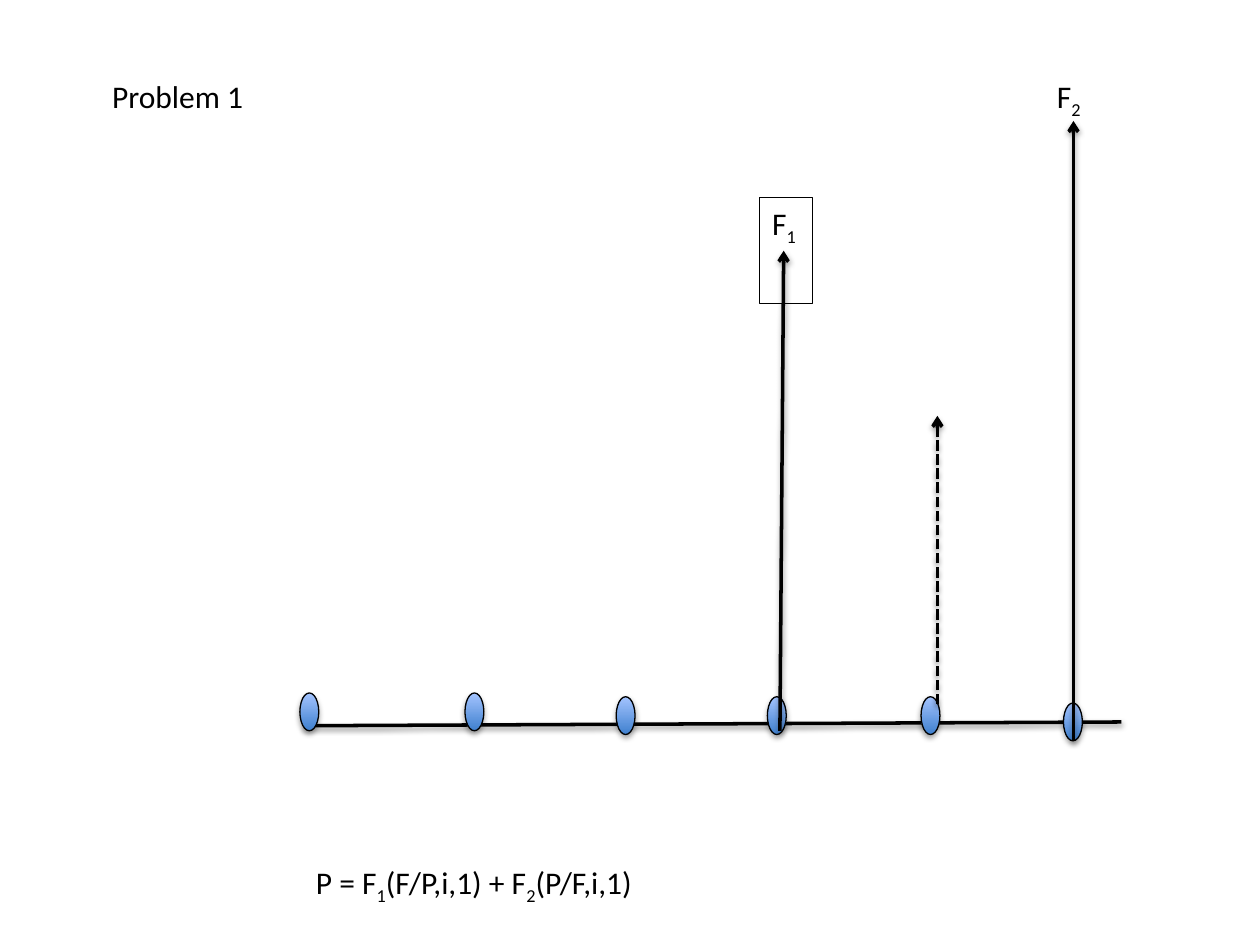
from lxml.etree import SubElement
from pptx import Presentation
from pptx.dml.color import RGBColor
from pptx.enum.dml import MSO_LINE
from pptx.enum.shapes import MSO_CONNECTOR, MSO_SHAPE
from pptx.enum.text import MSO_ANCHOR, PP_ALIGN
from pptx.oxml.ns import qn
from pptx.util import Inches, Pt

BLACK = RGBColor(0x00, 0x00, 0x00)
DEEP = RGBColor(0x3F, 0x80, 0xCE)
PALE = RGBColor(0xA4, 0xC4, 0xFF)

TITLE = "Problem 1"
DOT_W, DOT_H = 0.15, 0.3
DOTS = [(2.38, 5.5), (3.69, 5.5), (4.89, 5.53), (6.09, 5.53), (7.31, 5.53), (8.44, 5.58)]
AXIS = (2.41, 5.76, 8.9, 5.73)
# Start and end of each arrow, then whether it is dashed
FLOWS = [
    ((7.44, 5.59, 7.44, 3.3), True),
    ((6.19, 5.8, 6.22, 1.99), False),
    ((8.52, 5.88, 8.52, 0.96), False),
]
# Pieces of text alternate between normal and subscript
F_ONE = ["F", "1"]
F_TWO = ["F", "2"]
FORMULA = ["P = F", "1", "(F/P,i,1) + F", "2", "(P/F,i,1)"]


def style(run):
    run.font.name = "Calibri"
    run.font.size = Pt(18)
    run.font.color.rgb = BLACK


def add_shadow(shape, dist, alpha):
    effects = SubElement(shape._element.spPr, qn("a:effectLst"))
    outer = SubElement(effects, qn("a:outerShdw"), blurRad=str(Pt(3.1)),
                       dist=str(Pt(dist)), dir="5400000", rotWithShape="0")
    color = SubElement(outer, qn("a:srgbClr"), val="000000")
    SubElement(color, qn("a:alpha"), val=str(alpha * 1000))


def add_line(shapes, ends, dashed=False, arrow=False):
    line = shapes.add_connector(MSO_CONNECTOR.STRAIGHT, *map(Inches, ends))
    line.line.color.rgb = BLACK
    line.line.width = Pt(2)
    if dashed:
        line.line.dash_style = MSO_LINE.SQUARE_DOT
    if arrow:
        SubElement(line.line._get_or_add_ln(), qn("a:tailEnd"), type="arrow")
    add_shadow(line, 1.6, 38)


def add_dot(shapes, left, top):
    dot = shapes.add_shape(MSO_SHAPE.OVAL, *map(Inches, (left, top, DOT_W, DOT_H)))
    dot.fill.gradient()
    dot.fill.gradient_angle = 90
    for stop, color in zip(dot.fill.gradient_stops, (DEEP, PALE)):
        stop.color.rgb = color
    dot.line.color.rgb = BLACK
    dot.line.width = Pt(0.75)
    add_shadow(dot, 1.8, 35)


def add_label(shapes, pieces, box, wrap=True):
    label = shapes.add_textbox(*map(Inches, box))
    label.text_frame.word_wrap = wrap
    para = label.text_frame.paragraphs[0]
    for i, piece in enumerate(pieces):
        run = para.add_run()
        run.text = piece
        style(run)
        if i % 2:
            run._r.get_or_add_rPr().set("baseline", "-25000")
    return label


def main():
    prs = Presentation()
    prs.slide_width, prs.slide_height = Inches(10), Inches(7.5)
    slide = prs.slides.add_slide(prs.slide_layouts[5])

    title = slide.shapes.title
    title.left, title.top, title.width, title.height = map(Inches, (0.79, 0.56, 1.26, 0.4))
    frame = title.text_frame
    frame.text = TITLE
    frame.word_wrap = False
    frame.vertical_anchor = MSO_ANCHOR.TOP
    frame.paragraphs[0].alignment = PP_ALIGN.LEFT
    style(frame.paragraphs[0].runs[0])

    diagram = slide.shapes.add_group_shape().shapes
    add_line(diagram, AXIS)
    for left, top in DOTS:
        add_dot(diagram, left, top)
    for ends, dashed in FLOWS:
        add_line(diagram, ends, dashed, arrow=True)
    framed = add_label(diagram, F_ONE, (6.03, 1.57, 0.42, 0.84))
    framed.line.color.rgb = BLACK
    framed.line.width = Pt(0.75)

    add_label(slide.shapes, F_TWO, (8.29, 0.56, 0.42, 0.4))
    add_label(slide.shapes, FORMULA, (2.41, 6.8, 2.93, 0.4), wrap=False)
    prs.save("out.pptx")


if __name__ == "__main__":
    main()
